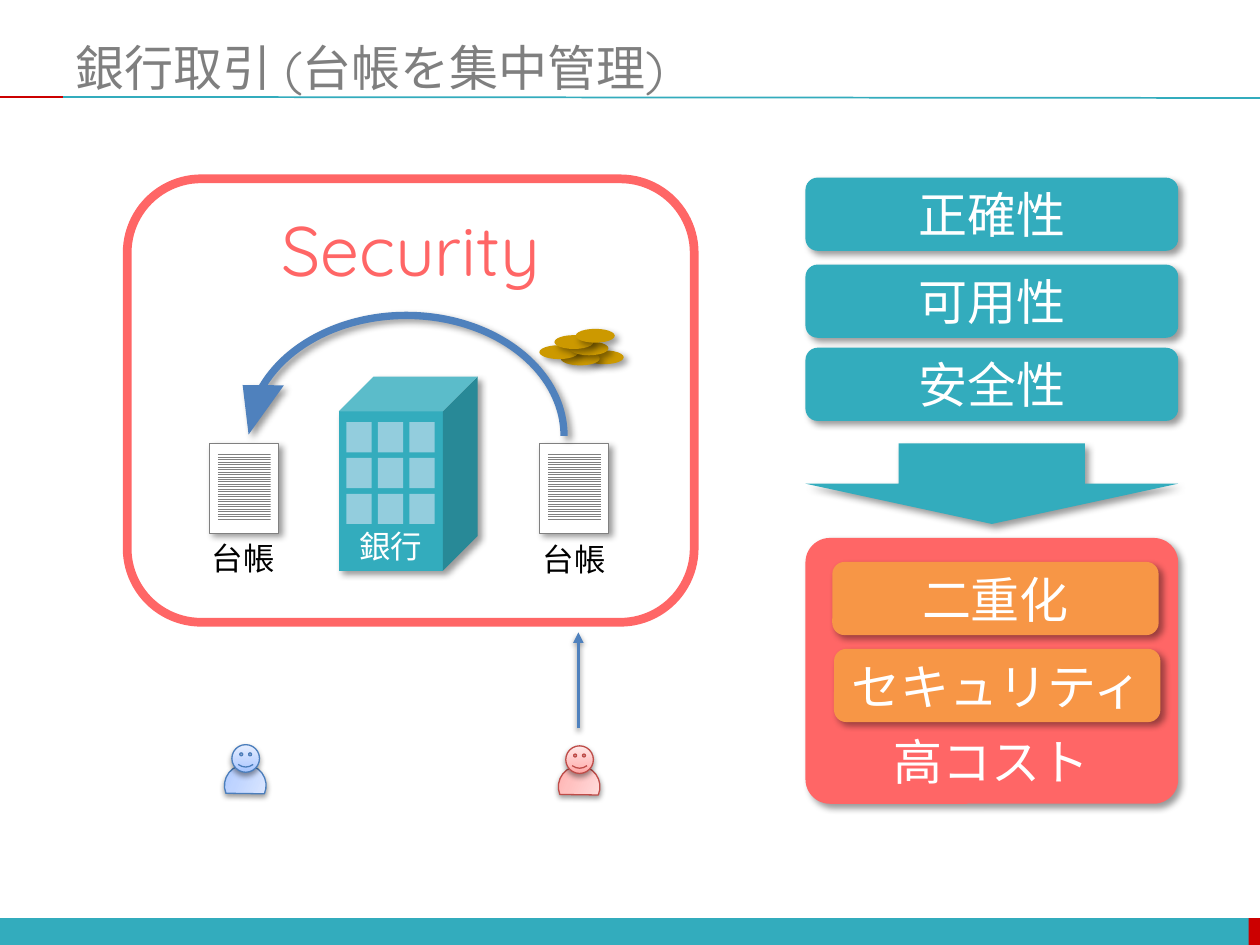
from copy import deepcopy

from lxml import etree
from pptx import Presentation
from pptx.dml.color import RGBColor
from pptx.enum.dml import MSO_PATTERN
from pptx.enum.shapes import MSO_CONNECTOR, MSO_SHAPE
from pptx.enum.text import MSO_ANCHOR, PP_ALIGN
from pptx.oxml.ns import qn
from pptx.util import Pt

RECT = MSO_SHAPE.RECTANGLE
ROUND = MSO_SHAPE.ROUNDED_RECTANGLE
PROCESS = MSO_SHAPE.FLOWCHART_PROCESS
TOP, MIDDLE, BOTTOM = MSO_ANCHOR.TOP, MSO_ANCHOR.MIDDLE, MSO_ANCHOR.BOTTOM
LEFT, CENTER = PP_ALIGN.LEFT, PP_ALIGN.CENTER
LIGHT_HORIZONTAL = MSO_PATTERN.LIGHT_HORIZONTAL

FONT = "Quicksand"
TEAL, RED, CORAL, ORANGE = "33ACBD", "CC0000", "FF6666", "F79646"
BLUE, WHITE, GRAY, GOLD = "4F81BD", "FFFFFF", "808080", "CC9900"
WINDOW = "93CDDD"

# Shadows: opacity %, blur, distance, direction in degrees
DEEP = (40, 4, 3, 45)
SOFT = (38, 3.1, 1.6, 90)

BLUE_SHADES = ("A4C4FF", "BFD4FF", "E6EEFF")
RED_SHADES = ("FFA6A5", "FFC0BF", "FFE7E7")


def color(code):
    return RGBColor.from_string(code)


def add_shadow(effects, shadow):
    opacity, blur, distance, angle = shadow
    outer = etree.SubElement(
        effects, qn("a:outerShdw"), blurRad=str(Pt(blur)), dist=str(Pt(distance)),
        dir=str(angle * 60000), algn="tl", rotWithShape="0")
    tone = etree.SubElement(outer, qn("a:srgbClr"), val="000000")
    etree.SubElement(tone, qn("a:alpha"), val=str(opacity * 1000))


def add_shape(page, kind, left, top, width, height, fill=None, line=None,
              weight=0.75, shadow=None, adjustments=()):
    shape = page.shapes.add_shape(kind, Pt(left), Pt(top), Pt(width), Pt(height))
    for index, value in enumerate(adjustments):
        shape.adjustments[index] = value
    if fill:
        shape.fill.solid()
        shape.fill.fore_color.rgb = color(fill)
    else:
        shape.fill.background()
    if line:
        shape.line.color.rgb = color(line)
        shape.line.width = Pt(weight)
    else:
        shape.line.fill.background()
    shape.shadow.inherit = False
    if shadow:
        add_shadow(shape._element.spPr.find(qn("a:effectLst")), shadow)
    return shape


def write(box, text, size=28, ink=WHITE, align=CENTER, anchor=MIDDLE, wrap=True):
    frame = box.text_frame
    frame.word_wrap = wrap
    frame.vertical_anchor = anchor
    para = frame.paragraphs[0]
    para.alignment = align
    span = para.add_run()
    span.text = text
    span.font.name = FONT
    span.font.size = Pt(size)
    span.font.color.rgb = color(ink)
    etree.SubElement(span.font._element, qn("a:ea"), typeface=FONT)


def add_text(page, left, top, width, height, text, **text_format):
    box = page.shapes.add_textbox(Pt(left), Pt(top), Pt(width), Pt(height))
    write(box, text, **text_format)


def add_line(page, start, end, ink, weight, shadow=None, arrow=False):
    points = [Pt(value) for value in (*start, *end)]
    line = page.shapes.add_connector(MSO_CONNECTOR.STRAIGHT, *points)
    line.line.color.rgb = color(ink)
    line.line.width = Pt(weight)
    if arrow:
        etree.SubElement(line.line._get_or_add_ln(), qn("a:tailEnd"), type="triangle")
    effects = etree.SubElement(line._element.spPr, qn("a:effectLst"))
    if shadow:
        add_shadow(effects, shadow)


def shade(shape, shades):
    """Fill upwards from the first of three shades to the last."""
    shape.fill.gradient()
    shape.fill.gradient_angle = 90
    stops = shape._element.spPr.find(qn("a:gradFill")).find(qn("a:gsLst"))
    stops.insert(1, deepcopy(stops[0]))
    for stop, tone, position in zip(shape.fill.gradient_stops, shades, (0, 0.35, 1)):
        stop.color.rgb = color(tone)
        stop.position = position


def add_person(page, left, top, shades, line):
    body = add_shape(page, MSO_SHAPE.CHORD, left, top + 11.5, 23.8, 23.8,
                     line=line, shadow=SOFT)
    body.rotation = 113.3
    head = add_shape(page, MSO_SHAPE.SMILEY_FACE, left + 4.3, top, 15.8, 15.8,
                     line=line, shadow=SOFT)
    for part in (body, head):
        shade(part, shades)


def add_bank(page):
    cube = add_shape(page, MSO_SHAPE.CUBE, 193.7, 215.3, 79.2, 110.9, TEAL, shadow=DEEP)
    write(cube, "銀行", size=18, anchor=BOTTOM)
    for row in range(3):
        for column in range(3):
            add_shape(page, RECT, 198 + 18 * column, 241.2 + 20.5 * row,
                      14.4, 17.3, WINDOW)


def add_coins(page):
    for left, top in ((334.1, 200.2), (320.4, 200.9), (308.2, 197.3),
                      (325.4, 195.1), (316.8, 191.5), (329, 187.9)):
        add_shape(page, MSO_SHAPE.OVAL, left, top, 22.3, 7.9, GOLD, shadow=DEEP)


def add_ledger(page, left, top):
    add_shape(page, PROCESS, left, top, 39.6, 51.1, WHITE, GRAY, 0.25, DEEP)
    rows = add_shape(page, PROCESS, left + 5, top + 6.2, 30.2, 38.2)
    rows.fill.patterned()
    rows.fill.pattern = LIGHT_HORIZONTAL
    rows.fill.fore_color.rgb = color(GRAY)
    rows.fill.back_color.rgb = color(WHITE)


def add_card(page, left, top, width, fill, text):
    card = add_shape(page, ROUND, left, top, width, 41.8, fill, shadow=DEEP)
    write(card, text)


def add_transfer_arrow(page):
    arrow = add_shape(page, MSO_SHAPE.CIRCULAR_ARROW, 130.3, 168.5, 203.8, 161.3, BLUE,
                      shadow=DEEP, adjustments=(0.026, 11.423, 204.28, 108, 0.073))
    arrow._element.spPr.find(qn("a:xfrm")).set("flipH", "1")


def main():
    deck = Presentation()
    deck.slide_width, deck.slide_height = Pt(720), Pt(540)
    page = deck.slides.add_slide(deck.slide_layouts[6])

    # Footer bar, title and rule
    add_shape(page, RECT, 0, 524.7, 720, 15.3, TEAL)
    add_shape(page, RECT, 713.5, 524.7, 6.5, 15.3, RED)
    add_line(page, (36, 55.4), (720, 56), TEAL, 1)
    add_line(page, (0, 55.4), (36, 55.4), RED, 1)
    add_text(page, 36, 21.6, 684, 33.1, "銀行取引 (台帳を集中管理)",
             ink="7F7F7F", align=LEFT)

    # Customers
    add_person(page, 128.2, 425.5, BLUE_SHADES, "4B7EBC")
    add_person(page, 319, 426.2, RED_SHADES, "BF4C48")
    add_line(page, (330.5, 416.2), (330.5, 361.4), BLUE, 2, SOFT, arrow=True)

    # Bank and its ledgers inside the security frame
    add_bank(page)
    add_coins(page)
    for left in (119.5, 308.2):
        add_ledger(page, left, 253.4)
    frame = add_shape(page, MSO_SHAPE.FLOWCHART_ALTERNATE_PROCESS,
                      72.7, 102.2, 324, 253.4, line=CORAL, weight=5)
    write(frame, "Security", size=40, ink=CORAL, anchor=TOP)
    for left, top in ((113.8, 304.6), (303.1, 305.3)):
        add_text(page, left, top, 51.1, 28.8, "台帳", size=18, ink="000000",
                 align=LEFT, anchor=TOP, wrap=False)
    add_transfer_arrow(page)

    # Requirements leading to high cost
    for top, text in ((101.5, "正確性"), (151.2, "可用性"), (198.7, "安全性")):
        add_card(page, 460.3, top, 213, TEAL, text)
    add_shape(page, MSO_SHAPE.DOWN_ARROW, 460.3, 253.4, 213, 46, TEAL, shadow=DEEP)
    cost = add_shape(page, ROUND, 460.3, 307.4, 213, 151.9, CORAL, shadow=DEEP,
                     adjustments=(0.092,))
    write(cost, "高コスト", anchor=BOTTOM)
    add_card(page, 475.6, 321.1, 186.5, ORANGE, "二重化")
    add_card(page, 476.6, 370.8, 186.5, ORANGE, "セキュリティ")

    deck.save("out.pptx")


if __name__ == "__main__":
    main()
